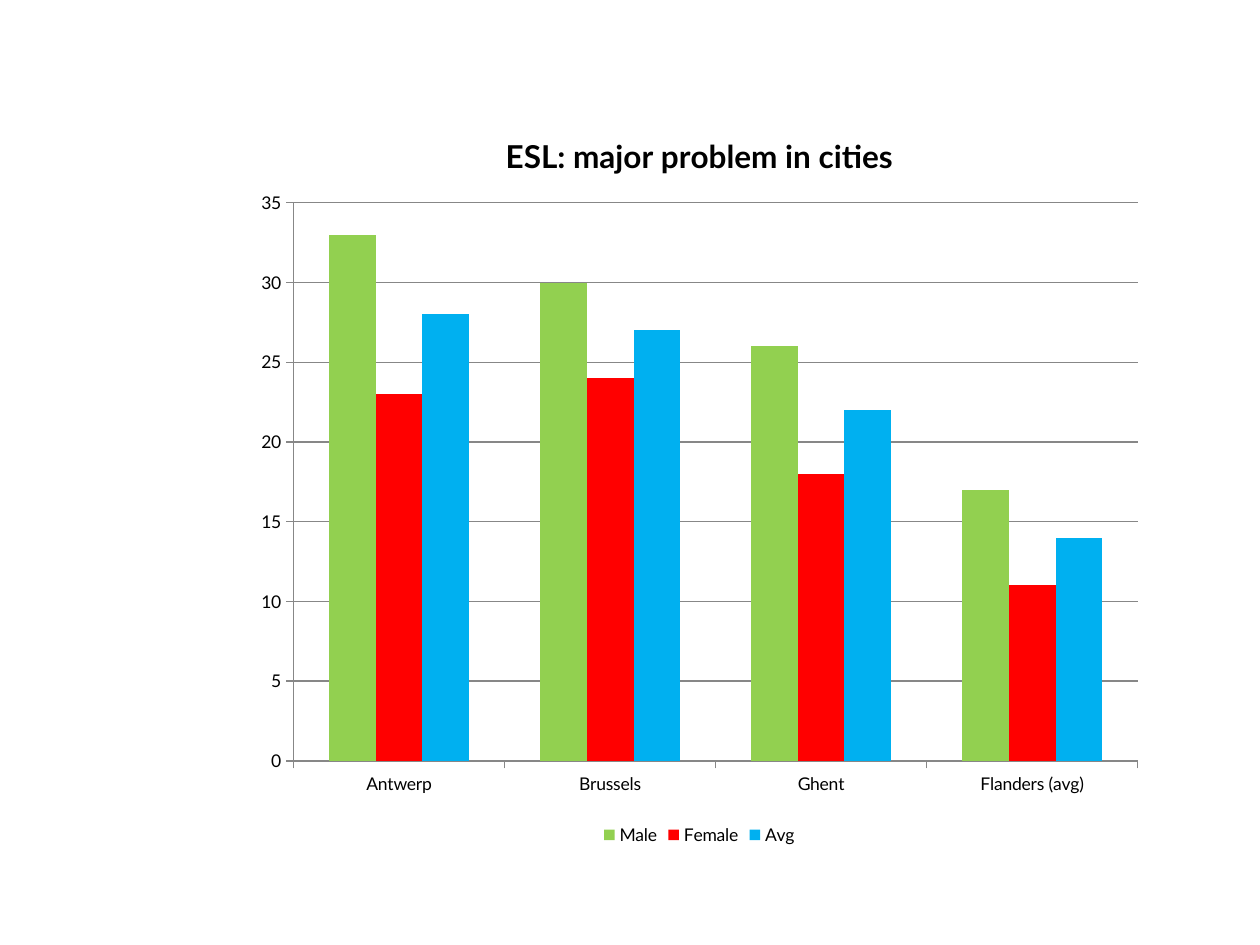
"""Build a slide with a column chart of early school leaving in cities."""
from lxml.etree import SubElement
from pptx import Presentation
from pptx.chart.data import CategoryChartData as ChartData
from pptx.dml.color import RGBColor
from pptx.enum.chart import XL_CHART_TYPE as ChartType
from pptx.enum.chart import XL_LEGEND_POSITION as LegendPosition
from pptx.enum.chart import XL_TICK_MARK as TickMark
from pptx.oxml.ns import qn
from pptx.util import Inches, Pt

FONT = "Lato"
BLACK = RGBColor(0x00, 0x00, 0x00)
GRAY = RGBColor(0x87, 0x87, 0x87)
GREEN = RGBColor(0x92, 0xD0, 0x50)
RED = RGBColor(0xFF, 0x00, 0x00)
BLUE = RGBColor(0x00, 0xB0, 0xF0)

CHART_WIDTH = Inches(7.24)
CHART_HEIGHT = Inches(5.91)
CITIES = ["Antwerp", "Brussels", "Ghent", "Flanders (avg)"]
SERIES = [
    ("Male", (33, 30, 26, 17), GREEN),
    ("Female", (23, 24, 18, 11), RED),
    ("Avg", (28, 27, 22, 14), BLUE),
]


def style_font(font, size, bold=False):
    """Apply the slide's typeface and text colour."""
    font.name = FONT
    font.size = Pt(size)
    font.bold = bold
    font.color.rgb = BLACK


def style_line(line):
    """Draw a thin gray line."""
    line.color.rgb = GRAY
    line.width = Pt(0.75)


def add_column_chart(slide):
    """Add the clustered columns and return the chart."""
    data = ChartData()
    data.categories = CITIES
    for name, values, _ in SERIES:
        data.add_series(name, values)
    chart = slide.shapes.add_chart(
        ChartType.COLUMN_CLUSTERED,
        Inches(1.93), Inches(0.84), CHART_WIDTH, CHART_HEIGHT, data,
    ).chart
    style_font(chart.font, 10)
    plot = chart.plots[0]
    plot.gap_width = 150
    plot.overlap = 0
    plot.vary_by_categories = False
    for series, (_, _, color) in zip(plot.series, SERIES):
        series.invert_if_negative = False
        series.format.fill.solid()
        series.format.fill.fore_color.rgb = color
    return chart


def place_plot(chart, left, top, width, height):
    """Fix the inner plot rectangle within the chart frame."""
    plot_area = chart.element.find(".//" + qn("c:plotArea"))
    layout = plot_area.find(qn("c:layout"))
    if layout is None:
        layout = SubElement(plot_area, qn("c:layout"))
        plot_area.insert(0, layout)
    manual = SubElement(layout, qn("c:manualLayout"))
    settings = {
        "layoutTarget": "inner",
        "xMode": "edge",
        "yMode": "edge",
        "x": left / CHART_WIDTH,
        "y": top / CHART_HEIGHT,
        "w": width / CHART_WIDTH,
        "h": height / CHART_HEIGHT,
    }
    for name, value in settings.items():
        SubElement(manual, qn(f"c:{name}")).set("val", str(value))


def style_axes(chart):
    """Set the tick marks, axis lines, scale and gridlines."""
    for axis in (chart.category_axis, chart.value_axis):
        axis.major_tick_mark = TickMark.OUTSIDE
        axis.minor_tick_mark = TickMark.NONE
        style_line(axis.format.line)
    value_axis = chart.value_axis
    value_axis.minimum_scale = 0
    value_axis.maximum_scale = 35
    value_axis.major_unit = 5
    value_axis.has_major_gridlines = True
    style_line(value_axis.major_gridlines.format.line)


def add_title(chart, text):
    """Put a bold title above the plot."""
    chart.has_title = True
    chart.chart_title.include_in_layout = False
    paragraph = chart.chart_title.text_frame.paragraphs[0]
    paragraph.text = text
    style_font(paragraph.font, 18, bold=True)


def add_legend(chart):
    """Put the legend below the plot."""
    chart.has_legend = True
    chart.legend.position = LegendPosition.BOTTOM
    chart.legend.include_in_layout = False


def main():
    """Build and save the slide."""
    presentation = Presentation()
    presentation.slide_width = Inches(10)
    presentation.slide_height = Inches(7.5)
    slide = presentation.slides.add_slide(presentation.slide_layouts[6])
    chart = add_column_chart(slide)
    place_plot(chart, Inches(0.4), Inches(0.77), Inches(6.7), Inches(4.43))
    style_axes(chart)
    add_title(chart, "ESL: major problem in cities")
    add_legend(chart)
    presentation.save("out.pptx")


if __name__ == "__main__":
    main()
